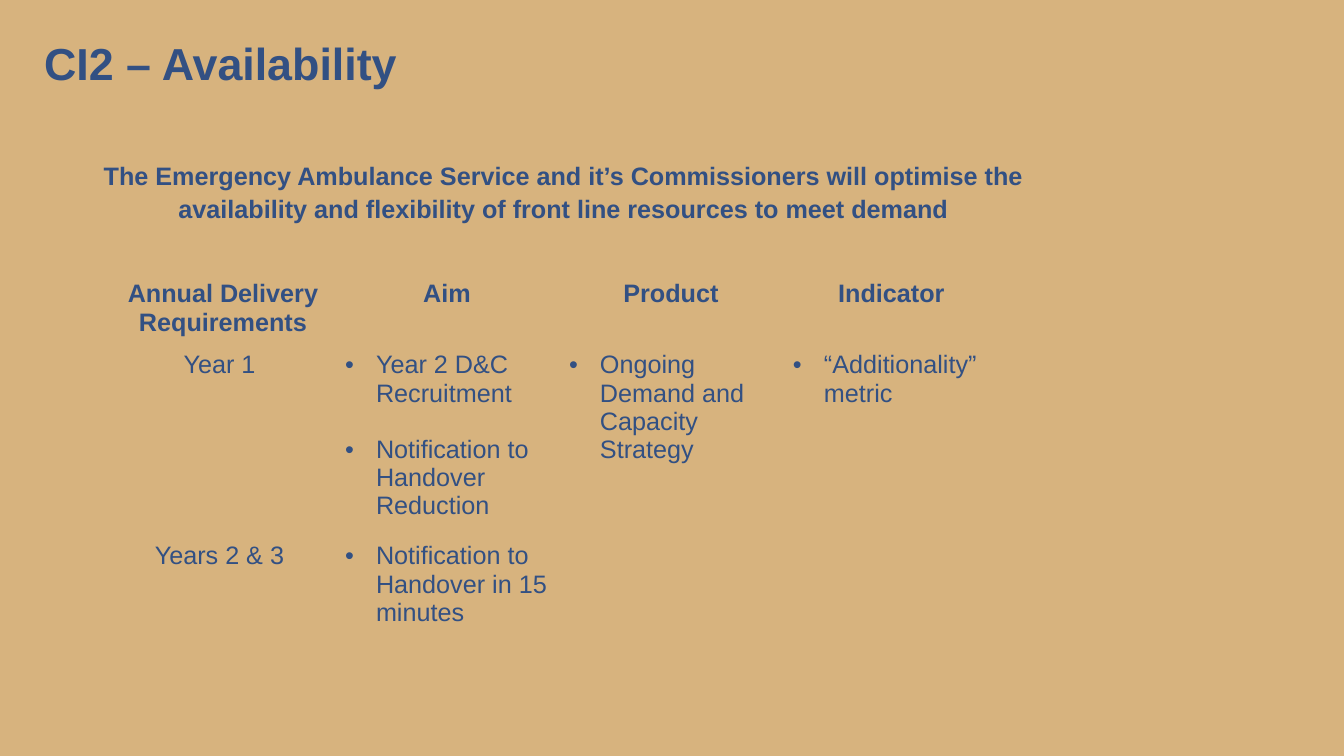
from pptx import Presentation
from pptx.dml.color import RGBColor
from pptx.enum.text import MSO_ANCHOR as Anchor, MSO_AUTO_SIZE as Fit, PP_ALIGN as Align
from pptx.oxml import parse_xml as to_xml
from pptx.oxml.ns import nsdecls
from pptx.util import Emu, Pt

PX = 9072  # EMU per px, at 100.8 px to the inch
SAND, NAVY = "D7B37E", "325083"

HEADS = ["Annual Delivery Requirements", "Aim", "Product", "Indicator "]
YEARS = [
    ["Year 1 ",
     ["Year 2 D&C Recruitment", "Notification to Handover Reduction"],
     ["Ongoing Demand and Capacity Strategy"],
     ["“Additionality” metric"]],
    ["Years 2 & 3 ", ["Notification to Handover in 15 minutes"], [], []],
]
ROWS = [71, 191, 101]


def px(n):
    return Emu(n * PX)


def color(code):
    return RGBColor.from_string(code)


def style(para, size, bold=False, align=Align.LEFT):
    para.alignment = align
    font = para.font
    for item in [font] + [run.font for run in para.runs]:
        item.name, item.size, item.bold = "Arial", Pt(size), bold
        item.color.rgb = color(NAVY)


def indent(para, left, first):
    props = para._p.get_or_add_pPr()
    props.set("marL", str(px(left)))
    props.set("indent", str(px(first)))
    return props


def add_title(slide, text):
    title = slide.shapes.title
    title.left, title.top, title.width, title.height = map(px, (34, 19, 1056, 81))
    title.fill.solid()
    title.fill.fore_color.rgb = color(SAND)
    frame = title.text_frame
    frame.text = text
    frame.auto_size = Fit.NONE
    frame.vertical_anchor = Anchor.MIDDLE
    para = frame.paragraphs[0]
    para.line_spacing = Pt(43)
    style(para, 32, True)


def add_goal(slide, text):
    box = slide.shapes.add_textbox(*map(px, (-20, 152, 1066, 254)))
    frame = box.text_frame
    frame.word_wrap = True
    frame.text = text
    para = frame.paragraphs[0]
    para.level = 2
    para.line_spacing = 1.1
    indent(para, 101, 0)
    style(para, 18, True, Align.CENTER)


def add_edges(cell, base):
    props = cell._tc.get_or_add_tcPr()
    for side, width in zip("LRTB", (1, 1, 1, base)):
        props.append(to_xml(
            f'<a:ln{side} {nsdecls("a")} w="{Pt(width)}"><a:solidFill>'
            f'<a:srgbClr val="{SAND}"/></a:solidFill></a:ln{side}>'))
    cell.fill.background()


def add_bullets(cell, items):
    frame = cell.text_frame
    frame.text = "\n".join(items)
    for i, para in enumerate(frame.paragraphs):
        if items:
            if i:
                para.space_before = Pt(20)
            props = indent(para, 31, -31)
            props.append(to_xml(f'<a:buFont {nsdecls("a")} typeface="Arial"/>'))
            props.append(to_xml(f'<a:buChar {nsdecls("a")} char="•"/>'))
        style(para, 18)


def add_plan(slide):
    table = slide.shapes.add_table(
        len(ROWS), len(HEADS), *map(px, (111, 275, 896, sum(ROWS)))).table
    for row, high in zip(table.rows, ROWS):
        row.height = px(high)
    for r, line in enumerate([HEADS] + YEARS):
        for c, item in enumerate(line):
            cell = table.cell(r, c)
            add_edges(cell, 1 if r else 3)
            if isinstance(item, list):
                add_bullets(cell, item)
            else:
                cell.text_frame.text = item
                style(cell.text_frame.paragraphs[0], 18, r == 0, Align.CENTER)


def main():
    deck = Presentation()
    deck.slide_width, deck.slide_height = px(1344), px(756)
    slide = deck.slides.add_slide(deck.slide_layouts[5])
    back = slide.background.fill
    back.solid()
    back.fore_color.rgb = color(SAND)

    # Heading and goal
    add_title(slide, "CI2 – Availability")
    add_goal(slide, "The Emergency Ambulance Service and it’s Commissioners will "
             "optimise the availability and flexibility of front line resources "
             "to meet demand")

    # Delivery plan by year
    add_plan(slide)
    deck.save("out.pptx")


if __name__ == "__main__":
    main()
